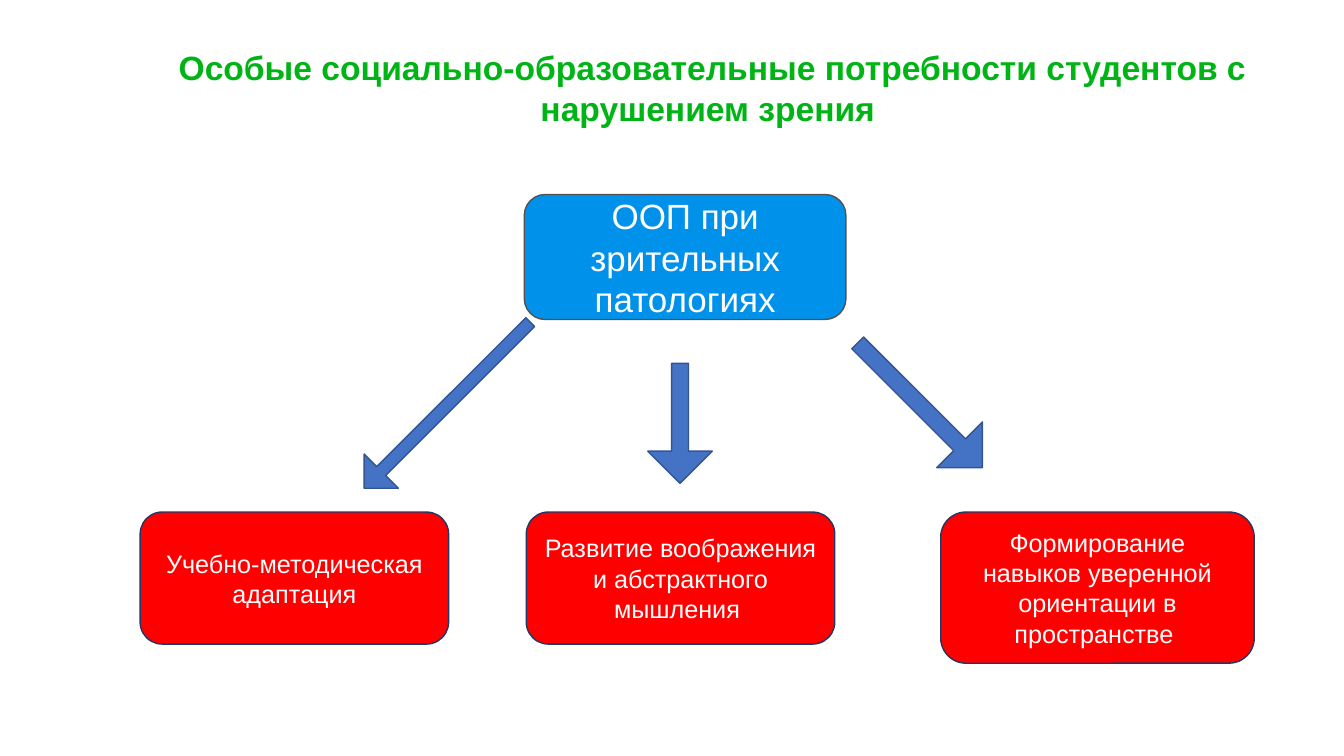
from dataclasses import dataclass

from pptx import Presentation
from pptx.dml.color import RGBColor
from pptx.enum.shapes import MSO_SHAPE
from pptx.enum.text import MSO_ANCHOR, PP_ALIGN
from pptx.shapes.autoshape import Shape
from pptx.slide import Slide
from pptx.text.text import TextFrame
from pptx.util import Inches, Pt


@dataclass(frozen=True)
class Theme:
    font: str = "Arial"
    title_size: int = 24
    topic_size: int = 25
    need_size: int = 18
    title: str = "00B415"
    text: str = "FFFFFF"
    topic_fill: str = "0091EA"
    topic_line: str = "525252"
    need_fill: str = "FF0000"
    need_line: str = "203864"
    arrow_fill: str = "4472C4"
    arrow_line: str = "325491"


THEME = Theme()


@dataclass(frozen=True)
class Box:
    text: str
    left: float
    top: float
    width: float
    height: float
    size: int = THEME.need_size
    fill: str = THEME.need_fill
    line: str = THEME.need_line


@dataclass(frozen=True)
class Arrow:
    left: float
    top: float
    length: float
    thickness: float
    rotation: int


TITLE = "Особые социально-образовательные потребности студентов с нарушением зрения "
NEEDS_TOP = 5.08
NEEDS = [
    Box("Учебно-методическая адаптация", 1.39, NEEDS_TOP, 3.06, 1.31),
    Box("Развитие воображения и абстрактного мышления ", 5.22, NEEDS_TOP, 3.06, 1.31),
    Box("Формирование навыков уверенной ориентации в пространстве ", 9.33, NEEDS_TOP, 3.11, 1.5),
]
TOPIC = Box("ООП при зрительных патологиях", 5.2, 1.93, 3.19, 1.24,
            THEME.topic_size, THEME.topic_fill, THEME.topic_line)
ARROWS = [
    Arrow(8.25, 3.7, 1.75, 0.64, 45),
    Arrow(3.27, 3.78, 2.33, 0.48, 135),
    Arrow(6.15, 3.88, 1.19, 0.64, 90),
]


def write(frame: TextFrame, text: str, size: int, color: str, bold: bool = False) -> None:
    frame.word_wrap = True
    frame.text = text
    paragraph = frame.paragraphs[0]
    paragraph.alignment = PP_ALIGN.CENTER
    paragraph.font.name = THEME.font
    paragraph.font.size = Pt(size)
    paragraph.font.bold = bold
    paragraph.font.color.rgb = RGBColor.from_string(color)


def paint(shape: Shape, fill: str, line: str) -> None:
    shape.shadow.inherit = False
    shape.fill.solid()
    shape.fill.fore_color.rgb = RGBColor.from_string(fill)
    shape.line.color.rgb = RGBColor.from_string(line)
    shape.line.width = Pt(1)


def add_title(slide: Slide) -> None:
    title = slide.shapes.title
    title.left, title.top = Inches(1.12), Inches(0.42)
    title.width, title.height = Inches(11.89), Inches(0.91)
    write(title.text_frame, TITLE, THEME.title_size, THEME.title, bold=True)
    title.text_frame.vertical_anchor = MSO_ANCHOR.TOP


def add_box(slide: Slide, box: Box) -> None:
    shape = slide.shapes.add_shape(
        MSO_SHAPE.ROUNDED_RECTANGLE,
        Inches(box.left), Inches(box.top), Inches(box.width), Inches(box.height))
    paint(shape, box.fill, box.line)
    write(shape.text_frame, box.text, box.size, THEME.text)
    shape.text_frame.vertical_anchor = MSO_ANCHOR.MIDDLE


def add_arrow(slide: Slide, arrow: Arrow) -> None:
    shape = slide.shapes.add_shape(
        MSO_SHAPE.RIGHT_ARROW,
        Inches(arrow.left), Inches(arrow.top), Inches(arrow.length), Inches(arrow.thickness))
    shape.adjustments[0] = 0.26
    shape.rotation = arrow.rotation
    paint(shape, THEME.arrow_fill, THEME.arrow_line)


def main() -> None:
    presentation = Presentation()
    presentation.slide_width, presentation.slide_height = Inches(13.33), Inches(7.5)
    slide = presentation.slides.add_slide(presentation.slide_layouts.get_by_name("Title Only"))

    # Heading
    add_title(slide)

    # Needs, the arrows leading to them, and the central topic
    for need in NEEDS:
        add_box(slide, need)
    for arrow in ARROWS:
        add_arrow(slide, arrow)
    add_box(slide, TOPIC)

    presentation.save("out.pptx")


if __name__ == "__main__":
    main()
